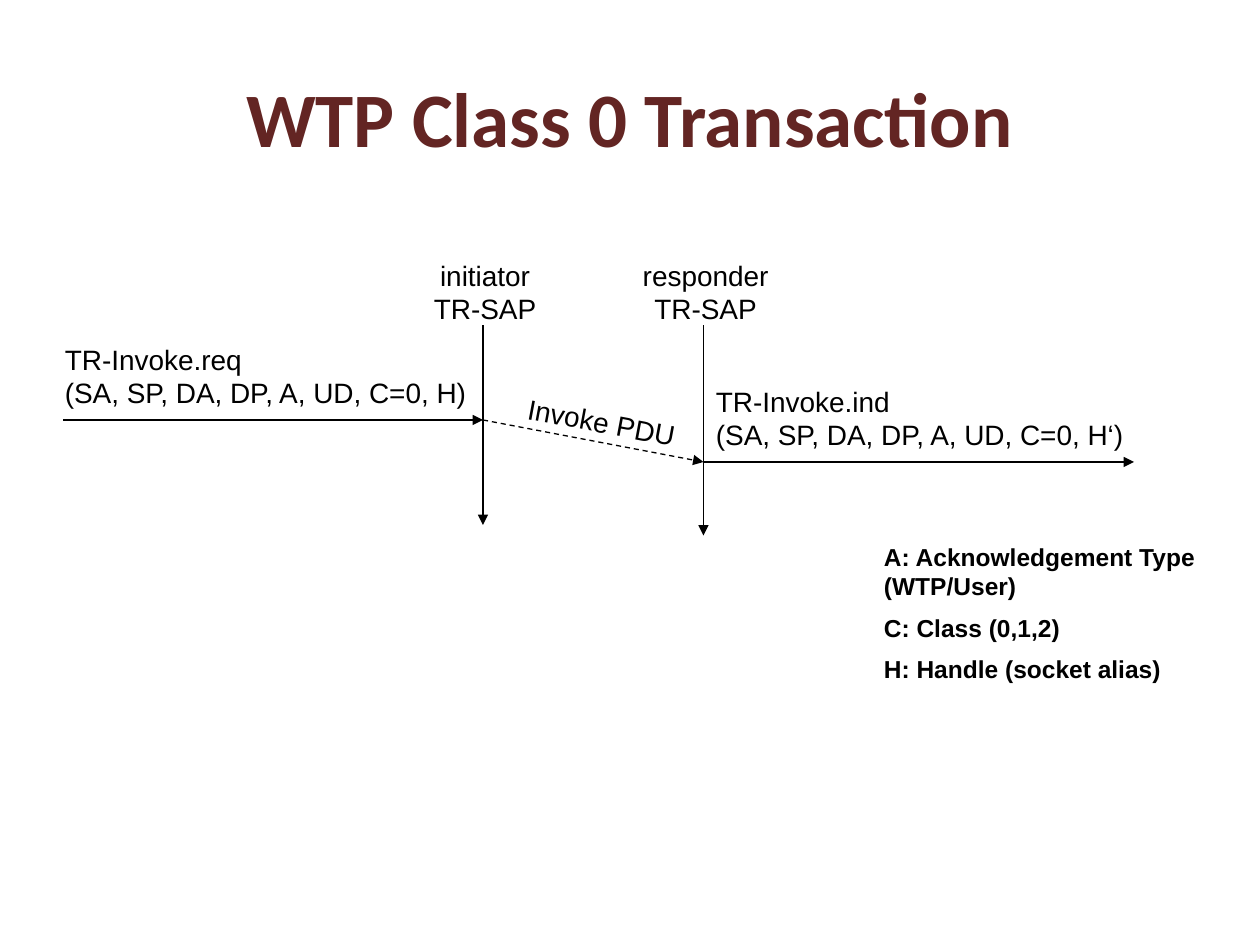
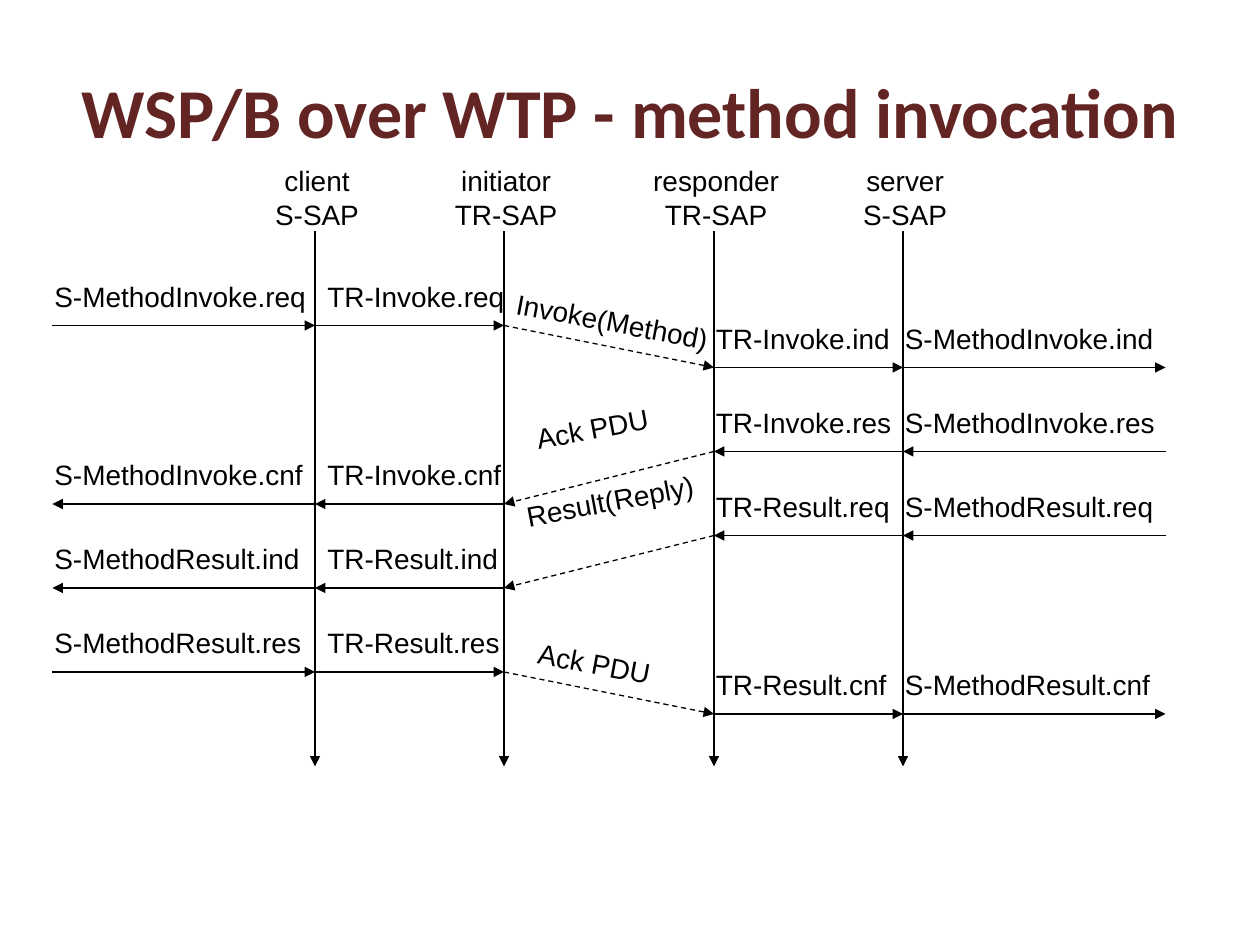
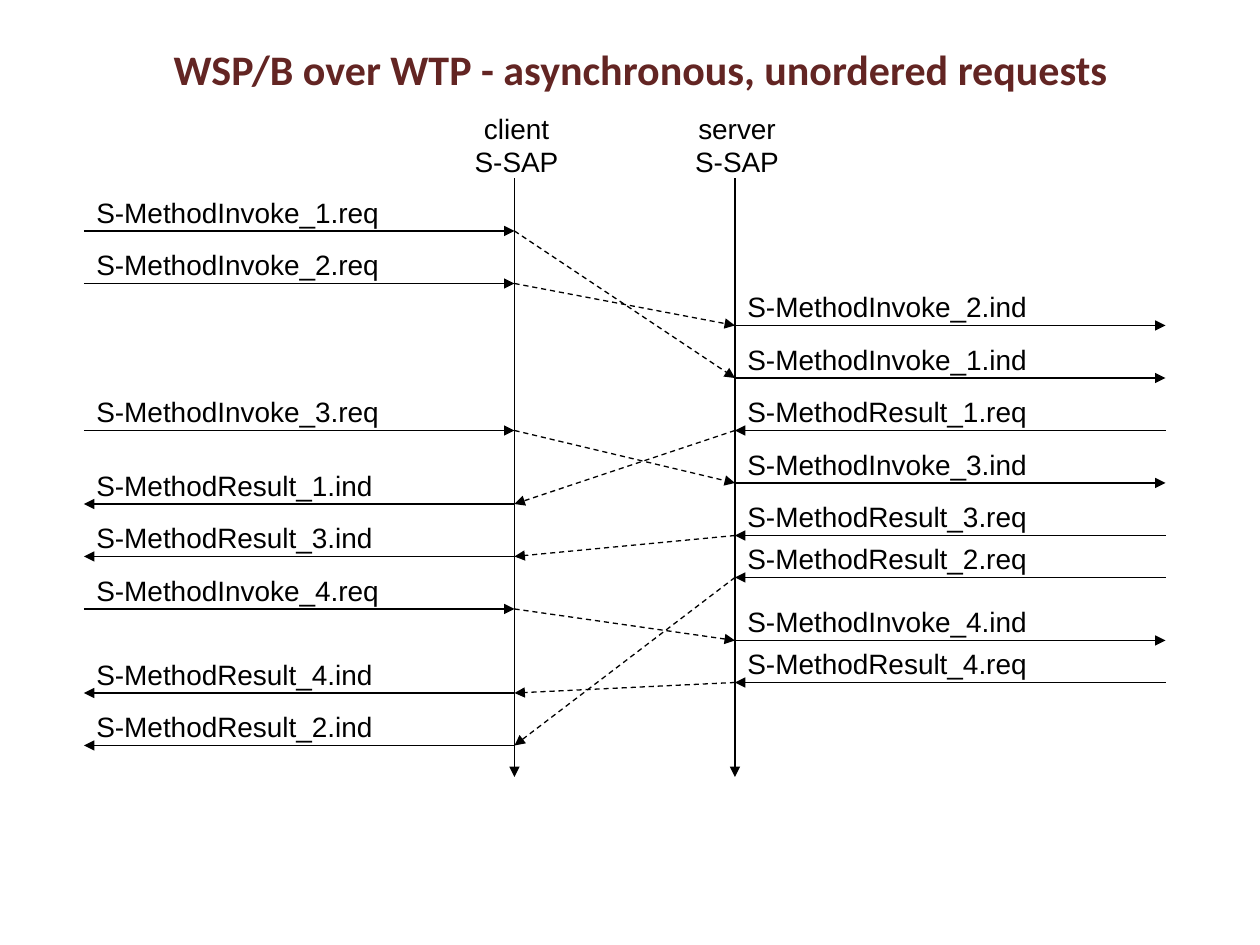
from dataclasses import dataclass

from pptx import Presentation
from pptx.dml.color import RGBColor
from pptx.enum.dml import MSO_LINE_DASH_STYLE as Dash
from pptx.enum.shapes import MSO_CONNECTOR as Connector
from pptx.enum.text import MSO_ANCHOR as Anchor, PP_ALIGN as Align
from pptx.oxml.ns import qn
from pptx.util import Cm, Pt
from lxml.etree import SubElement


@dataclass(frozen=True)
class Theme:
    title_color: RGBColor = RGBColor(0x63, 0x25, 0x23)
    ink: RGBColor = RGBColor(0, 0, 0)
    title_font: str = "Calibri"
    body_font: str = "Arial"
    label_size: int = 16
    legend_size: int = 14
    legend_gap: int = 7
    line_width: float = 0.75


THEME = Theme()
GRID_CM = 2.54 / 12
HEADING_RISE = 7
HEADING_SHIFT = 0.2
SLOPE = 10.6

# Role: access point and heading width in grid steps
ROLES = {
    "client": ("S-SAP", 11),
    "initiator": ("TR-SAP", 13),
    "responder": ("TR-SAP", 15),
    "server": ("S-SAP", 11),
}


@dataclass(frozen=True)
class Span:
    """A stretch on which a service primitive travels, in grid steps."""
    prefix: str
    left: float
    right: float
    label_left: float
    label_width: float


@dataclass(frozen=True)
class Message:
    name: str
    sent: str
    received: str
    left_y: float
    right_y: float
    rightwards: bool


def grid(steps):
    return Cm(steps * GRID_CM)


def text_height(text):
    """Height in grid steps of a label with its margins."""
    return 1.2 + 3.24 * (text.count("\n") + 1)


def add_text(slide, text, left, top, width, height, size=THEME.label_size,
             font=THEME.body_font, color=THEME.ink, bold=False, align=Align.LEFT):
    box = slide.shapes.add_textbox(grid(left), grid(top), grid(width), grid(height))
    box.text_frame.word_wrap = True
    box.text_frame.text = text
    for paragraph in box.text_frame.paragraphs:
        paragraph.alignment = align
        paragraph.font.name = font
        paragraph.font.size = Pt(size)
        paragraph.font.bold = bold
        paragraph.font.color.rgb = color
    return box


def add_title(slide, text, size, left, top, width, height):
    box = add_text(slide, text, left, top, width, height, size, THEME.title_font,
                   THEME.title_color, True, Align.CENTER)
    box.text_frame.vertical_anchor = Anchor.MIDDLE


def add_arrow(slide, start, end, dashed=False):
    arrow = slide.shapes.add_connector(
        Connector.STRAIGHT, *(grid(steps) for steps in (*start, *end)))
    arrow.line.color.rgb = THEME.ink
    arrow.line.width = Pt(THEME.line_width)
    if dashed:
        arrow.line.dash_style = Dash.DASH
    line = arrow.line._get_or_add_ln()
    SubElement(line, qn("a:round"))
    SubElement(line, qn("a:tailEnd"), type="triangle")
    SubElement(arrow._element.spPr, qn("a:effectLst"))


def add_lifeline(slide, role, x, top, bottom):
    access_point, width = ROLES[role]
    heading = f"{role}\n{access_point}"
    add_text(slide, heading, x + HEADING_SHIFT - width / 2, top - HEADING_RISE,
             width, text_height(heading), align=Align.CENTER)
    add_arrow(slide, (x, top), (x, bottom))


def add_message(slide, message, left_spans, right_spans, label_rise):
    """Draw the labelled arrows on both sides and the dashed one between them."""
    left_suffix, right_suffix = message.sent, message.received
    if not message.rightwards:
        left_suffix, right_suffix = right_suffix, left_suffix
    sides = ((left_spans, message.left_y, left_suffix),
             (right_spans, message.right_y, right_suffix))
    arrows = [((left_spans[-1].right, message.left_y),
               (right_spans[0].left, message.right_y), True)]
    for spans, y, suffix in sides:
        for span in spans:
            label = f"{span.prefix}{message.name}.{suffix}"
            add_text(slide, label, span.label_left, y - label_rise,
                     span.label_width, text_height(label))
            arrows.append(((span.left, y), (span.right, y), False))
    for left_end, right_end, dashed in arrows:
        if message.rightwards:
            add_arrow(slide, left_end, right_end, dashed)
        else:
            add_arrow(slide, right_end, left_end, dashed)


def add_sloped_label(slide, text, center_x, center_y, width, angle):
    height = text_height(text)
    box = add_text(slide, text, center_x - width / 2, center_y - height / 2,
                   width, height, align=Align.CENTER)
    box.rotation = angle


def add_legend(slide, entries, left, top, width, height):
    box = add_text(slide, "\n".join(entries), left, top, width, height,
                   THEME.legend_size, bold=True)
    for paragraph in box.text_frame.paragraphs[1:]:
        paragraph.space_before = Pt(THEME.legend_gap)


def build_class_0(slide):
    add_title(slide, "WTP Class 0 Transaction", 44, 6, 3.6, 108, 15)
    add_lifeline(slide, "initiator", 46, 31, 50)
    add_lifeline(slide, "responder", 67, 31, 51)
    parameters = "(SA, SP, DA, DP, A, UD, C=0, {})"
    invoke = Message("Invoke", "req\n" + parameters.format("H"),
                     "ind\n" + parameters.format("H‘"), 40, 44, True)
    add_message(slide, invoke, [Span("TR-", 6, 46, 5, 42)],
                [Span("TR-", 67, 108, 67, 43)], 8)
    add_sloped_label(slide, "Invoke PDU", 57.3, 40.2, 17, SLOPE)
    add_legend(slide, ["A: Acknowledgement Type (WTP/User)", "C: Class (0,1,2)",
                       "H: Handle (socket alias)"], 83, 51, 34, 15)


def build_method_invocation(slide):
    add_title(slide, "WSP/B over WTP - method invocation", 40, 6, 3, 108, 15)
    for role, x in zip(ROLES, (30, 48, 68, 86)):
        add_lifeline(slide, role, x, 22, 73)
    left_spans = [Span("S-Method", 5, 30, 4, 27), Span("TR-", 30, 48, 30, 20)]
    right_spans = [Span("TR-", 68, 86, 67, 20), Span("S-Method", 86, 111, 85, 27)]
    for message in (
        Message("Invoke", "req", "ind", 31, 35, True),
        Message("Invoke", "res", "cnf", 48, 43, False),
        Message("Result", "req", "ind", 56, 51, False),
        Message("Result", "res", "cnf", 64, 68, True),
    ):
        add_message(slide, message, left_spans, right_spans, 5)
    for text, x, y, width, angle in (
        ("Invoke(Method)", 58.3, 30.6, 22, SLOPE),
        ("Ack PDU", 56.4, 40.8, 14, -SLOPE),
        ("Result(Reply)", 58.1, 47.7, 19, -SLOPE),
        ("Ack PDU", 56.6, 63.2, 14, SLOPE),
    ):
        add_sloped_label(slide, text, x, y, width, angle)


def build_unordered_requests(slide):
    add_title(slide, "WSP/B over WTP - asynchronous, unordered requests", 24,
              8, 0, 106, 13)
    add_lifeline(slide, "client", 49, 17, 74)
    add_lifeline(slide, "server", 70, 17, 74)
    left_spans = [Span("S-Method", 8, 49, 8, 30)]
    right_spans = [Span("S-Method", 70, 111, 70, 30)]
    for name, left_y, right_y in (
        ("Invoke_1", 22, 36), ("Invoke_2", 27, 31), ("Invoke_3", 41, 46),
        ("Result_1", 48, 41), ("Result_3", 53, 51), ("Result_2", 71, 55),
        ("Invoke_4", 58, 61), ("Result_4", 66, 65),
    ):
        message = Message(name, "req", "ind", left_y, right_y,
                          name.startswith("Invoke"))
        add_message(slide, message, left_spans, right_spans, 4)


def main():
    presentation = Presentation()
    presentation.slide_width = Cm(25.4)
    presentation.slide_height = Cm(19.05)
    blank = presentation.slide_layouts[6]
    for build in (build_class_0, build_method_invocation, build_unordered_requests):
        build(presentation.slides.add_slide(blank))
    presentation.save("out.pptx")


if __name__ == "__main__":
    main()
